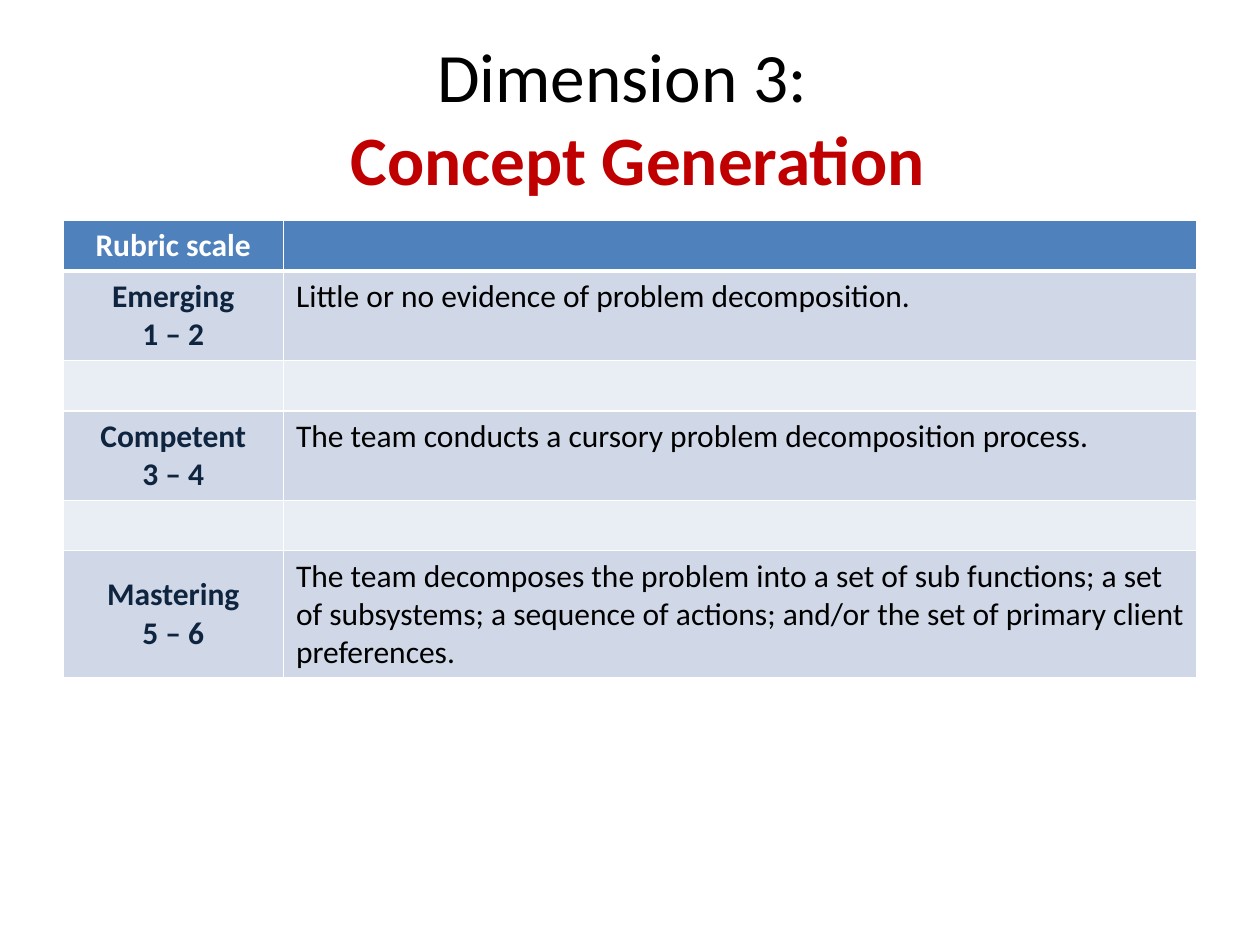
from lxml import etree
from pptx import Presentation
from pptx.dml.color import RGBColor
from pptx.enum.text import MSO_ANCHOR, PP_ALIGN
from pptx.oxml.ns import qn
from pptx.util import Inches, Pt

CENTER, LEFT = PP_ALIGN.CENTER, PP_ALIGN.LEFT
MIDDLE, TOP = MSO_ANCHOR.MIDDLE, MSO_ANCHOR.TOP

BLACK = RGBColor(0x00, 0x00, 0x00)
WHITE = RGBColor(0xFF, 0xFF, 0xFF)
RED = RGBColor(0xC0, 0x00, 0x00)
NAVY = RGBColor(0x0F, 0x24, 0x3E)
HEADER_BLUE = RGBColor(0x4F, 0x81, 0xBD)
DARK_BAND = RGBColor(0xD0, 0xD8, 0xE8)
LIGHT_BAND = RGBColor(0xE9, 0xED, 0xF4)
FONT = "Calibri"

COL_WIDTHS = [1.75, 7.25]
ROWS = [
    (0.4, "Rubric scale", ""),
    (0.71, "Emerging\n1 – 2", "Little or no evidence of problem decomposition."),
    (0.4, "", ""),
    (0.71, "Competent\n3 – 4", "The team conducts a cursory problem decomposition process."),
    (0.4, "", ""),
    (1.01, "Mastering\n5 – 6",
     "The team decomposes the problem into a set of sub functions; a set of subsystems; "
     "a sequence of actions; and/or the set of primary client preferences."),
]


def style_font(font, size, color, bold):
    font.name = FONT
    font.size = Pt(size)
    font.color.rgb = color
    font.bold = bold


def set_borders(cell, widths):
    """Draw white borders; widths maps L, R, T and B to points, in that order."""
    tcPr = cell._tc.get_or_add_tcPr()
    for side, width in widths.items():
        ln = etree.SubElement(tcPr, qn(f"a:ln{side}"), w=str(Pt(width)))
        fill = etree.SubElement(ln, qn("a:solidFill"))
        etree.SubElement(fill, qn("a:srgbClr"), val=str(WHITE))


prs = Presentation()
prs.slide_width, prs.slide_height = Inches(10), Inches(7.5)
s = prs.slides.add_slide(prs.slide_layouts[6])

# Title
title = s.shapes.add_textbox(Inches(0.5), Inches(0.3), Inches(9), Inches(1.25))
tf = title.text_frame
tf.word_wrap = True
tf.vertical_anchor = MIDDLE
p = tf.paragraphs[0]
p.text = "Dimension 3: \v "
p.alignment = CENTER
p.add_run().text = "Concept Generation"
for r in p.runs:
    style_font(r.font, 39.6, BLACK, False)
style_font(p.runs[-1].font, 39.6, RED, True)

# Rubric table
table = s.shapes.add_table(
    len(ROWS), len(COL_WIDTHS), Inches(0.5), Inches(1.75),
    Inches(sum(COL_WIDTHS)), Inches(sum(row[0] for row in ROWS))).table
for col, width in zip(table.columns, COL_WIDTHS):
    col.width = Inches(width)

for i, (height, *texts) in enumerate(ROWS):
    table.rows[i].height = Inches(height)
    for j, text in enumerate(texts):
        cell = table.cell(i, j)
        set_borders(cell, {"L": 1, "R": 1, "T": 3 if i == 1 else 1, "B": 3 if i == 0 else 1})
        cell.fill.solid()
        if i == 0:
            cell.fill.fore_color.rgb, color = HEADER_BLUE, WHITE
        else:
            cell.fill.fore_color.rgb = DARK_BAND if i % 2 else LIGHT_BAND
            color = NAVY if j == 0 else BLACK
        cell.vertical_anchor = MIDDLE if i > 0 and j == 0 else TOP
        cell.text_frame.text = text
        for p in cell.text_frame.paragraphs:
            p.alignment = CENTER if j == 0 else LEFT
            for r in p.runs:
                style_font(r.font, 18, color, j == 0)

prs.save("out.pptx")
